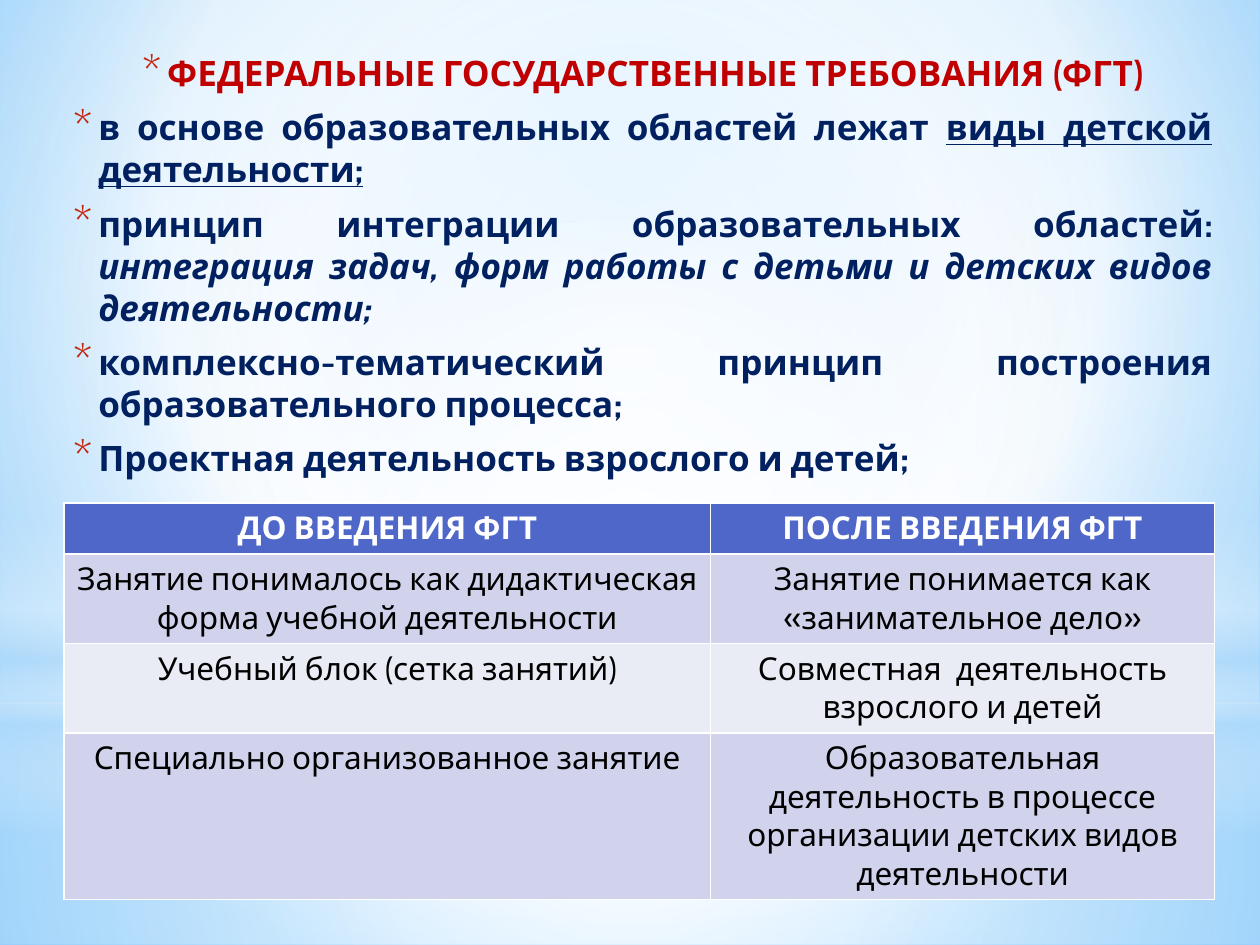
from lxml import etree
from pptx import Presentation
from pptx.dml.color import RGBColor
from pptx.enum.shapes import MSO_SHAPE
from pptx.enum.text import MSO_ANCHOR, MSO_AUTO_SIZE, PP_ALIGN
from pptx.oxml.ns import qn
from pptx.util import Inches, Pt

RECTANGLE, OVAL = MSO_SHAPE.RECTANGLE, MSO_SHAPE.OVAL
CENTER, JUSTIFY = PP_ALIGN.CENTER, PP_ALIGN.JUSTIFY
FONT = "Cabin"
RED, NAVY, BULLET_RED = "C00000", "002060", "C3260C"
WHITE, BLACK, HEADER_BLUE = "FFFFFF", "000000", "4E67C8"
SKY = "B4DCFA"
BAND_FILLS = ("D0D3EB", "E9EBF5")
MIDDLE = (50, 50, 50, 50)

BACKGROUND_STOPS = [(0, "9ED5FF", 100), (60, WHITE, 100), (100, "5BB9FF", 100)]
BACKGROUND_FOCUS = (20, 10, 20, 60)
GLOWS = [
    (RECTANGLE, (0, 5.58, 10, 1.92), MIDDLE,
     [(0, WHITE, 91), (37, WHITE, 76), (100, SKY, 79)]),
    (RECTANGLE, (0, 0, 10, 5.58), MIDDLE,
     [(0, WHITE, 89), (48, WHITE, 62), (100, SKY, 79)]),
    (RECTANGLE, (0, 4.12, 10, 2.5), None,
     [(0, WHITE, 0), (29, WHITE, 30), (45, SKY, 40), (55, WHITE, 26),
      (65, SKY, 60), (100, WHITE, 0)]),
    (OVAL, (0, 1.75, 10, 5.58), MIDDLE, [(0, WHITE, 100), (56, WHITE, 0)]),
]

BODY_BOX = (0.43, 0.36, 9.29, 6.85)
REQUIREMENTS = [
    (CENTER, RED, [("ФЕДЕРАЛЬНЫЕ ГОСУДАРСТВЕННЫЕ ТРЕБОВАНИЯ (ФГТ)", {})]),
    (JUSTIFY, NAVY, [("в основе образовательных областей лежат ", {}),
                     ("виды детской деятельности;", {"underline": True})]),
    (JUSTIFY, NAVY, [("принцип интеграции образовательных областей: ", {}),
                     ("интеграция задач, форм работы с детьми и детских видов деятельности;",
                      {"italic": True})]),
    (JUSTIFY, NAVY, [("комплексно-тематический принцип построения образовательного процесса;", {})]),
    (JUSTIFY, NAVY, [("Проектная деятельность взрослого и детей;", {})]),
]

TABLE_BOX = (0.51, 3.99, 9.13, 3.14)
COLUMN_WIDTHS = (5.13, 4)
ROW_HEIGHTS = (0.4, 0.71, 0.71, 1.32)
COMPARISON = [
    ("ДО ВВЕДЕНИЯ ФГТ", "ПОСЛЕ ВВЕДЕНИЯ ФГТ"),
    ("Занятие понималось как дидактическая форма учебной деятельности",
     "Занятие понимается как «занимательное дело»"),
    ("Учебный блок (сетка занятий)", "Совместная  деятельность взрослого и детей"),
    ("Специально организованное занятие",
     "Образовательная деятельность в процессе организации детских видов деятельности"),
]


def rgb(value):
    """Turn a hex string into a colour."""
    return RGBColor.from_string(value)


def inches(box):
    """Turn a box of numbers into lengths."""
    return [Inches(value) for value in box]


def add_element(parent, tag, **attributes):
    """Append a drawing element with the given attributes."""
    element = etree.SubElement(parent, qn(tag))
    for name, value in attributes.items():
        element.set(name, str(value))
    return element


def paint_gradient(fill, owner, stops, focus):
    """Fill with a circular gradient, or a vertical one without a focus."""
    fill.gradient()
    gradient = next(owner.iter(qn("a:gradFill")))
    for child in list(gradient):
        gradient.remove(child)
    stop_list = add_element(gradient, "a:gsLst")
    for position, color, opacity in stops:
        stop = add_element(stop_list, "a:gs", pos=position * 1000)
        color_element = add_element(stop, "a:srgbClr", val=color)
        add_element(color_element, "a:alpha", val=opacity * 1000)
    if focus:
        circle = add_element(gradient, "a:path", path="circle")
        edges = {side: edge * 1000 for side, edge in zip("ltrb", focus)}
        add_element(circle, "a:fillToRect", **edges)
    else:
        add_element(gradient, "a:lin", ang=90 * 60000, scaled=0)


def add_run(paragraph, text, color, **formats):
    """Add a run with the slide font and the given format."""
    run = paragraph.add_run()
    run.text = text
    run.font.color.rgb = rgb(color)
    for name, value in {"name": FONT, **formats}.items():
        setattr(run.font, name, value)


def add_glows(slide):
    """Draw the soft light shapes over the background."""
    for kind, box, focus, stops in GLOWS:
        shape = slide.shapes.add_shape(kind, *inches(box))
        shape.shadow.inherit = False
        shape.line.fill.background()
        paint_gradient(shape.fill, shape.element, stops, focus)


def fill_body(slide, body):
    """Write the requirements as a list in front of the glows."""
    slide.shapes.element.append(body.element)
    body.left, body.top, body.width, body.height = inches(BODY_BOX)
    frame = body.text_frame
    frame.auto_size = MSO_AUTO_SIZE.NONE
    frame.vertical_anchor = MSO_ANCHOR.TOP
    for index, (alignment, color, runs) in enumerate(REQUIREMENTS):
        paragraph = frame.add_paragraph() if index else frame.paragraphs[0]
        formats = {"alignment": alignment, "space_before": Pt(4), "space_after": Pt(3)}
        for name, value in formats.items():
            setattr(paragraph, name, value)
        properties = paragraph.element.get_or_add_pPr() if hasattr(paragraph, "element") else paragraph._p.get_or_add_pPr()
        properties.set("marL", str(Inches(0.25)))
        properties.set("indent", str(Inches(-0.2)))
        bullet_color = add_element(properties, "a:buClr")
        add_element(bullet_color, "a:srgbClr", val=BULLET_RED)
        add_element(properties, "a:buSzPct", val=130000)
        add_element(properties, "a:buFont", typeface=FONT)
        add_element(properties, "a:buChar", char="*")
        for text, extra in runs:
            add_run(paragraph, text, color, size=Pt(20), bold=True, **extra)


def add_comparison(slide):
    """Add the table of practice before and after the requirements."""
    table = slide.shapes.add_table(
        len(COMPARISON), len(COLUMN_WIDTHS), *inches(TABLE_BOX)).table
    for column, width in zip(table.columns, COLUMN_WIDTHS):
        column.width = Inches(width)
    for index, (row, height, texts) in enumerate(zip(table.rows, ROW_HEIGHTS, COMPARISON)):
        row.height = Inches(height)
        header = index == 0
        for cell, text in zip(row.cells, texts):
            cell.fill.solid()
            cell.fill.fore_color.rgb = rgb(HEADER_BLUE if header else BAND_FILLS[(index - 1) % 2])
            paragraph = cell.text_frame.paragraphs[0]
            paragraph.alignment = CENTER
            add_run(paragraph, text, WHITE if header else BLACK, size=Pt(18), bold=header)


def main():
    """Build and save the slide."""
    presentation = Presentation()
    presentation.slide_width, presentation.slide_height = Inches(10), Inches(7.5)
    slide = presentation.slides.add_slide(presentation.slide_layouts[1])
    title, body = slide.placeholders
    slide.shapes.element.remove(title.element)
    paint_gradient(slide.background.fill, slide.element, BACKGROUND_STOPS, BACKGROUND_FOCUS)
    add_glows(slide)
    fill_body(slide, body)
    add_comparison(slide)
    presentation.save("out.pptx")


if __name__ == "__main__":
    main()
